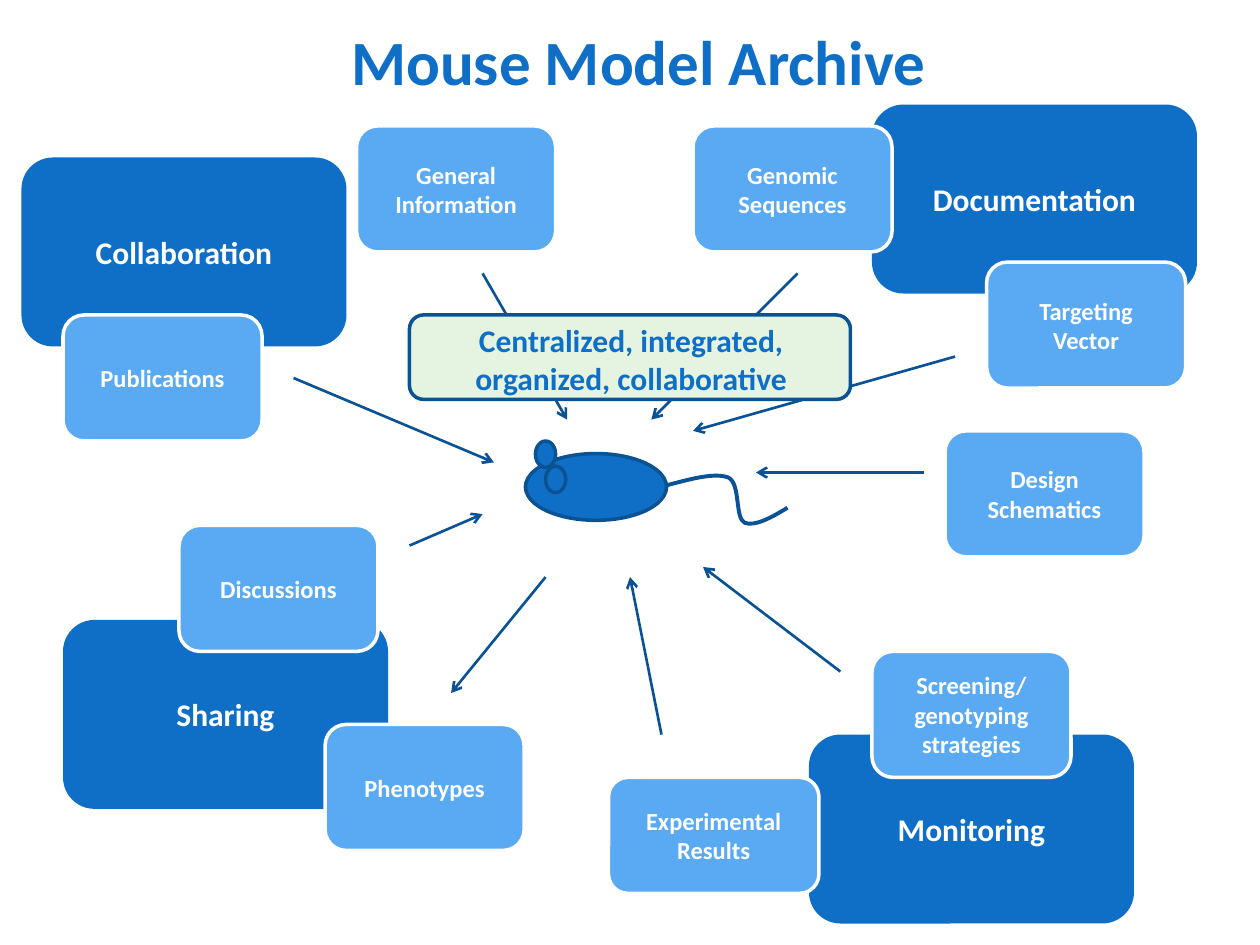
from dataclasses import dataclass

from lxml.etree import SubElement
from pptx import Presentation
from pptx.dml.color import RGBColor
from pptx.enum.shapes import MSO_CONNECTOR, MSO_SHAPE
from pptx.enum.text import MSO_ANCHOR, PP_ALIGN
from pptx.oxml.ns import qn
from pptx.util import Inches, Pt

BLUE = RGBColor(0x0F, 0x6F, 0xC6)
LIGHT_BLUE = RGBColor(0x59, 0xAA, 0xF2)
OUTLINE = RGBColor(0x0B, 0x52, 0x92)
NAVY = RGBColor(0x09, 0x52, 0x95)
PALE_GREEN = RGBColor(0xE5, 0xF4, 0xE0)
WHITE = RGBColor(0xFF, 0xFF, 0xFF)
FONT = "Calibri"

Point = tuple[float, float]


@dataclass(frozen=True)
class Box:
    text: str
    left: float
    top: float
    width: float = 1.58
    height: float = 1


@dataclass(frozen=True)
class Arrow:
    inner: Point
    outer: Point
    outward: bool = False


THEMES = [
    Box("Sharing", 0.5, 4.92, 2.58, 1.5),
    Box("Documentation", 6.92, 0.83, 2.58, 1.5),
    Box("Monitoring", 6.42, 5.83, 2.58, 1.5),
    Box("Collaboration", 0.17, 1.25, 2.58, 1.5),
]
TOPICS = [
    Box("General Information", 2.83, 1),
    Box("Discussions", 1.42, 4.17),
    Box("Phenotypes", 2.58, 5.75),
    Box("Screening/ genotyping strategies", 6.92, 5.17),
    Box("Design Schematics", 7.5, 3.42),
    Box("Targeting Vector", 7.83, 2.08),
    Box("Genomic Sequences", 5.5, 1),
    Box("Publications", 0.5, 2.5),
    Box("Experimental\nResults", 4.83, 6.17, 1.67, 0.92),
]
ARROWS = [
    Arrow((4.5, 3.33), (3.83, 2.17)),
    Arrow((5.17, 3.33), (6.33, 2.17)),
    Arrow((5.5, 3.42), (7.58, 2.83)),
    Arrow((6, 3.75), (7.33, 3.75)),
    Arrow((5.58, 4.5), (6.67, 5.33)),
    Arrow((5, 4.58), (5.25, 5.83)),
    Arrow((4.33, 4.58), (3.58, 5.5), outward=True),
    Arrow((3.83, 4.08), (3.25, 4.33)),
    Arrow((3.92, 3.67), (2.33, 3)),
]
BODY = Box("", 4.17, 3.6, 1.12, 0.53)
EARS = [Box("", 4.25, 3.5, 0.16, 0.21), Box("", 4.33, 3.7, 0.16, 0.21)]
TAIL: list[Point] = [
    (5.3, 3.85),
    (5.49, 3.8), (5.67, 3.75), (5.78, 3.79),
    (5.88, 3.84), (5.83, 4.11), (5.91, 4.15),
    (5.99, 4.18), (6.12, 4.11), (6.25, 4.03),
]


def bounds(box: Box) -> list[Inches]:
    return [Inches(v) for v in (box.left, box.top, box.width, box.height)]


def write(sp, text: str, size: float, color: RGBColor, align=PP_ALIGN.CENTER) -> None:
    tf = sp.text_frame
    tf.text = text
    tf.word_wrap = True
    for p in tf.paragraphs:
        p.alignment = align
        for r in p.runs:
            r.font.name = FONT
            r.font.size = Pt(size)
            r.font.bold = True
            r.font.color.rgb = color


def add_shape(shapes, kind, box: Box, fill: RGBColor, line: RGBColor | None, size: float = 18) -> None:
    sp = shapes.add_shape(kind, *bounds(box))
    sp.shadow.inherit = False
    sp.fill.solid()
    sp.fill.fore_color.rgb = fill
    if line is None:
        sp.line.fill.background()
    else:
        sp.line.color.rgb = line
        sp.line.width = Pt(2)
    if box.text:
        sp.text_frame.vertical_anchor = MSO_ANCHOR.MIDDLE
        write(sp, box.text, size, WHITE)


def add_text(shapes, box: Box, size: float, align) -> None:
    write(shapes.add_textbox(*bounds(box)), box.text, size, BLUE, align)


def add_curve(shapes, points: list[Point]) -> None:
    start, *rest = [(Inches(x), Inches(y)) for x, y in points]
    builder = shapes.build_freeform(*start)
    builder.add_line_segments(rest, close=False)
    sp = builder.convert_to_shape()
    sp.shadow.inherit = False
    sp.fill.background()
    sp.line.color.rgb = NAVY
    sp.line.width = Pt(2.25)
    outline = next(sp._element.iter(qn("a:path")))
    segments = outline.findall(qn("a:lnTo"))
    for i in range(0, len(segments), 3):
        curve = SubElement(outline, qn("a:cubicBezTo"))
        for segment in segments[i:i + 3]:
            curve.append(segment[0])
            outline.remove(segment)


def add_arrow(shapes, arrow: Arrow) -> None:
    ends = [Inches(v) for v in arrow.inner + arrow.outer]
    line = shapes.add_connector(MSO_CONNECTOR.STRAIGHT, *ends)
    line.line.color.rgb = NAVY
    line.line.width = Pt(1.5)
    tag = "a:tailEnd" if arrow.outward else "a:headEnd"
    SubElement(line.line._get_or_add_ln(), qn(tag), type="arrow")
    SubElement(line._element.spPr, qn("a:effectLst"))


def add_mouse(shapes) -> None:
    add_shape(shapes, MSO_SHAPE.OVAL, BODY, BLUE, OUTLINE)
    add_curve(shapes, TAIL)
    for ear in EARS:
        add_shape(shapes, MSO_SHAPE.OVAL, ear, BLUE, OUTLINE)


def main() -> None:
    prs = Presentation()
    prs.slide_width, prs.slide_height = Inches(10), Inches(7.5)
    s = prs.slides.add_slide(prs.slide_layouts[6])
    shapes = s.shapes
    rounded = MSO_SHAPE.ROUNDED_RECTANGLE

    for theme in THEMES:
        add_shape(shapes, rounded, theme, BLUE, None)
    for topic in TOPICS:
        add_shape(shapes, rounded, topic, LIGHT_BLUE, WHITE, 14)
    add_mouse(shapes.add_group_shape().shapes)
    add_text(shapes, Box("Mouse Model Archive", 2.69, 0.13, 6.34, 0.71), 36, PP_ALIGN.LEFT)
    for arrow in ARROWS:
        add_arrow(shapes, arrow)

    banner = shapes.add_group_shape().shapes
    add_shape(banner, rounded, Box("", 3.25, 2.5, 3.5, 0.67), PALE_GREEN, OUTLINE)
    slogan = "Centralized, integrated, organized, collaborative"
    add_text(banner, Box(slogan, 3.26, 2.5, 3.5, 0.71), 18, PP_ALIGN.CENTER)

    prs.save("out.pptx")


if __name__ == "__main__":
    main()
